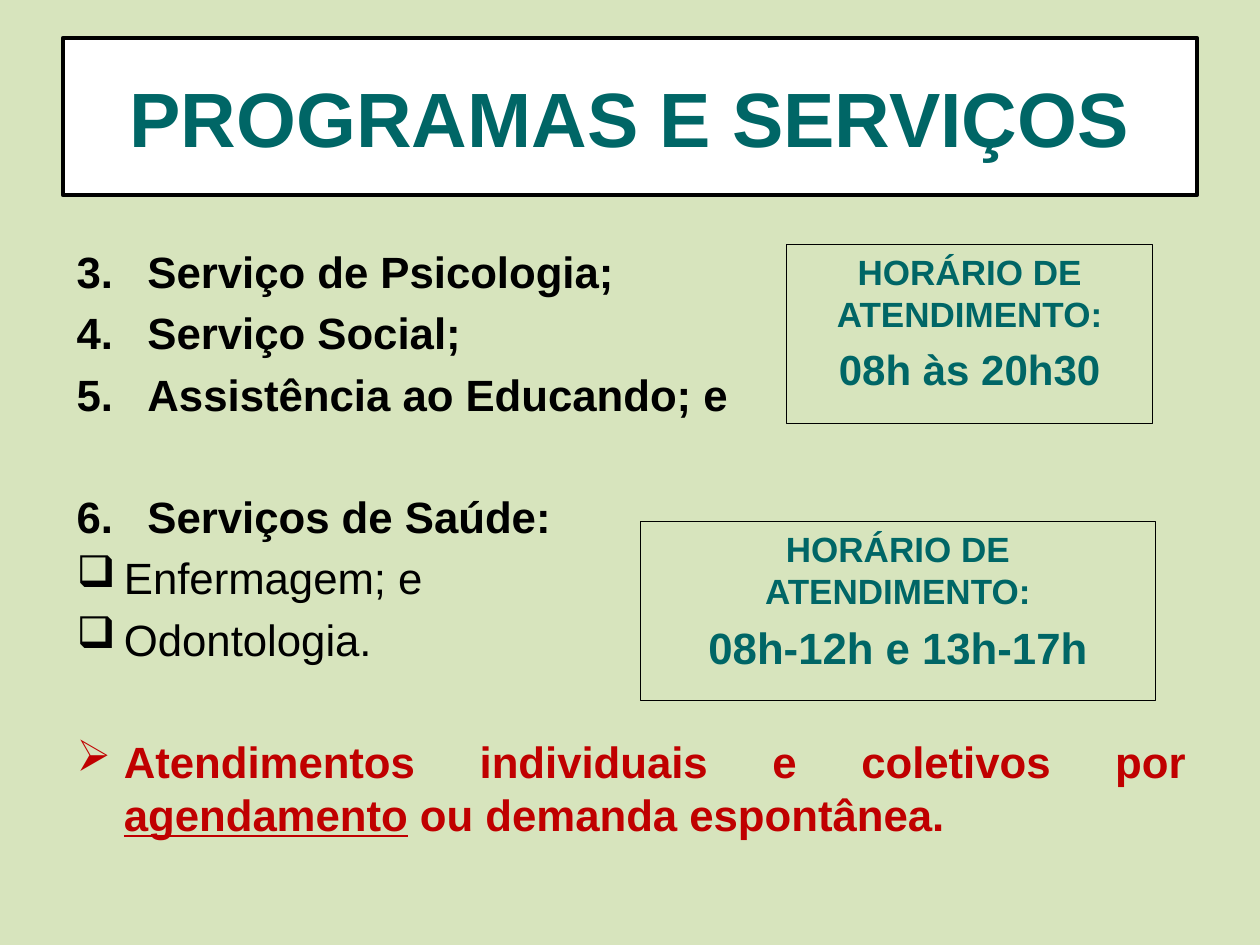
from lxml import etree
from pptx import Presentation
from pptx import util as u
from pptx.dml.color import RGBColor
from pptx.enum import shapes, text
from pptx.oxml.ns import qn

Pt = u.Pt
FONT = "Arial"
GREEN = RGBColor(0xD7, 0xE4, 0xBD)
TEAL = RGBColor(0x00, 0x66, 0x66)
RED = RGBColor(0xC0, 0x00, 0x00)
BLACK = RGBColor(0, 0, 0)
WHITE = RGBColor(0xFF, 0xFF, 0xFF)

LEFT, JUSTIFY, CENTER = (text.PP_ALIGN.LEFT, text.PP_ALIGN.JUSTIFY,
                         text.PP_ALIGN.CENTER)
SIZE = 25
SPACE = 5
GROUP_SPACE = 40  # space that sets a new group of items apart


def add_span(para, words, size, color, bold=True, underline=None):
    span = para.add_run()
    span.text = words
    font = span.font
    font.name, font.size, font.bold = FONT, Pt(size), bold
    font.underline = underline
    font.color.rgb = color


def next_para(frame):
    """Return the first paragraph while it is unused, then new ones."""
    first = frame.paragraphs[0]
    return frame.add_paragraph() if first.runs else first


def add_frame(page, left, top, width, height, line_width, fill=None):
    box = page.shapes.add_shape(shapes.MSO_SHAPE.RECTANGLE, Pt(left), Pt(top),
                                Pt(width), Pt(height))
    box.shadow.inherit = False
    if fill is None:
        box.fill.background()
    else:
        box.fill.solid()
        box.fill.fore_color.rgb = fill
    box.line.color.rgb = BLACK
    box.line.width = Pt(line_width)
    box.text_frame.word_wrap = True
    return box.text_frame


def add_title(page, words):
    frame = add_frame(page, 36, 21.6, 648, 90, 2.25, WHITE)
    frame.vertical_anchor = text.MSO_ANCHOR.MIDDLE
    para = next_para(frame)
    para.alignment = CENTER
    add_span(para, words, 44, TEAL)


def add_hours(page, left, top, width, hours, size):
    frame = add_frame(page, left, top, width, 102.2, 0)
    frame.vertical_anchor = text.MSO_ANCHOR.TOP
    for words, points, space in (("HORÁRIO DE ATENDIMENTO:", 20, 4),
                                 (hours, size, size / 5)):
        para = next_para(frame)
        para.alignment = CENTER
        para.space_before = Pt(space)
        add_span(para, words, points, TEAL)


def add_item(frame, spans, indent, mark=None, start=None, color=BLACK,
             align=LEFT, space=SPACE, bold=True):
    """Add a list item, numbered from start or bulleted with mark."""
    para = next_para(frame)
    para.alignment = align
    para.space_before = Pt(space)
    props = para._p.get_or_add_pPr()
    props.set("marL", str(Pt(indent)))
    props.set("indent", str(-Pt(indent)))
    bullet_color = etree.SubElement(props, qn("a:buClr"))
    etree.SubElement(bullet_color, qn("a:srgbClr"), val=str(color))
    if mark:
        etree.SubElement(props, qn("a:buChar"), char=mark)
    else:
        etree.SubElement(props, qn("a:buAutoNum"), type="arabicPeriod",
                         startAt=str(start))
    for words, underline in spans:
        add_span(para, words, SIZE, color, bold, underline)


def add_services(page):
    box = page.shapes.add_textbox(Pt(36.7), Pt(122.4), Pt(648), Pt(387.4))
    frame = box.text_frame
    frame.word_wrap = True
    frame.margin_top = Pt(17.6)

    # Numbered services
    for words in ("Serviço de Psicologia;", "Serviço Social;",
                  "Assistência ao Educando; e"):
        add_item(frame, [(words, None)], 40.5, start=3, align=JUSTIFY)
    add_item(frame, [("Serviços de Saúde:", None)], 40.5, start=6,
             space=GROUP_SPACE)

    # Health services
    for words in ("Enfermagem; e", "Odontologia."):
        add_item(frame, [(words, None)], 27, mark="❑", bold=False)

    # Closing note
    note = [("Atendimentos individuais e coletivos por ", None),
            ("agendamento", True), (" ou demanda espontânea.", None)]
    add_item(frame, note, 27, mark="➢", color=RED, align=JUSTIFY,
             space=GROUP_SPACE)


def main():
    deck = Presentation()
    deck.slide_width, deck.slide_height = Pt(720), Pt(540)
    page = deck.slides.add_slide(deck.slide_layouts[6])
    page.background.fill.solid()
    page.background.fill.fore_color.rgb = GREEN

    add_title(page, "PROGRAMAS E SERVIÇOS")
    add_services(page)
    add_hours(page, 449.3, 139.7, 209.5, "08h às 20h30", 24)
    add_hours(page, 365.8, 298.1, 294.5, "08h-12h e 13h-17h", 25)

    deck.save("out.pptx")


if __name__ == "__main__":
    main()
